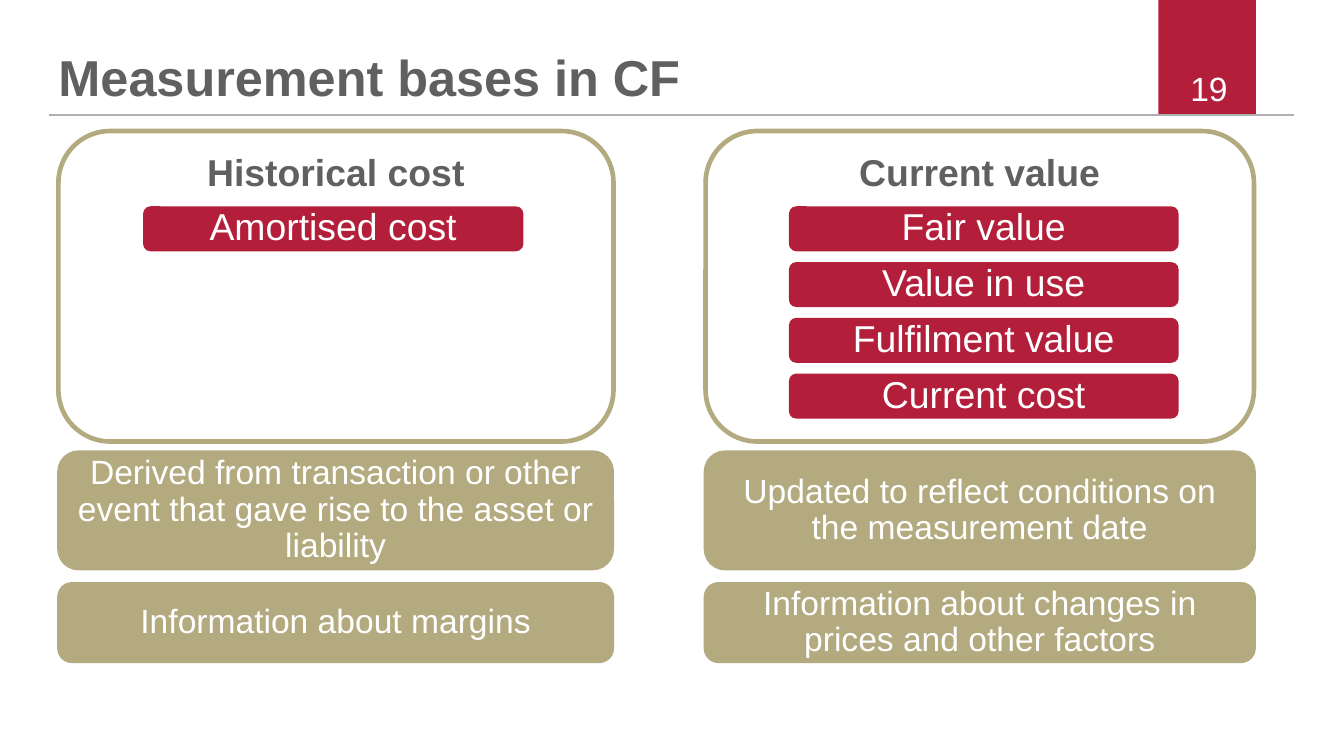
from dataclasses import dataclass
from typing import Optional

from lxml import etree
from pptx import Presentation, util as u
from pptx.dml.color import RGBColor
from pptx.enum import shapes, text
from pptx.oxml import ns

PX = 4572  # EMU per px, 200 px to the inch


@dataclass(frozen=True)
class Theme:
    font: str = "Arial"
    red: str = "B31E3A"
    sand: str = "B3AA7F"
    grey: str = "5F6062"
    rule: str = "AFAFB0"
    white: str = "FFFFFF"
    title_size: int = 27
    label_size: int = 20
    body_size: int = 18


@dataclass(frozen=True)
class Area:
    left: int
    top: int
    width: int
    height: int

    def emu(self) -> list[int]:
        return [n * PX for n in (self.left, self.top, self.width, self.height)]


@dataclass(frozen=True)
class Style:
    size: int
    color: str
    fill: Optional[str] = None
    line: Optional[str] = None
    line_width: float = 0
    bold: bool = False
    anchor: text.MSO_ANCHOR = text.MSO_ANCHOR.MIDDLE


@dataclass(frozen=True)
class Basis:
    left: int
    width: int
    heading: str
    chip_left: int
    chip_width: int
    chips: tuple[str, ...]
    note_left: int
    note_width: int
    source: str
    information: str


THEME = Theme()
FRAME = Style(THEME.label_size, THEME.grey, line=THEME.sand, line_width=2.5,
              bold=True, anchor=text.MSO_ANCHOR.TOP)
CHIP = Style(THEME.label_size, THEME.white, fill=THEME.red)
NOTE = Style(THEME.body_size, THEME.white, fill=THEME.sand,
             line=THEME.sand, line_width=2)
TITLE = Style(THEME.title_size, THEME.grey, bold=True,
              anchor=text.MSO_ANCHOR.BOTTOM)
NUMBER = Style(THEME.body_size, THEME.white)

BASES = (
    Basis(87, 826, "Historical cost", 213, 566, ("Amortised cost",), 88, 823,
          "Derived from transaction or other event that gave rise to the "
          "asset or liability",
          "Information about margins"),
    Basis(1050, 816, "Current value", 1174, 580,
          ("Fair value", "Value in use", "Fulfilment value", "Current cost"),
          1050, 816,
          "Updated to reflect conditions on the measurement date",
          "Information about changes in prices and other factors"),
)
CHIP_TOP, CHIP_PITCH, CHIP_HEIGHT = 307, 83, 67


def write(box, words: str, style: Style, align: text.PP_ALIGN,
          inset_x: int, inset_y: int, spacing: float = 0.9) -> None:
    frame = box.text_frame
    frame.text = words
    frame.word_wrap = True
    frame.auto_size = text.MSO_AUTO_SIZE.NONE
    frame.vertical_anchor = style.anchor
    frame.margin_left = frame.margin_right = inset_x * PX
    frame.margin_top = frame.margin_bottom = inset_y * PX
    para = frame.paragraphs[0]
    para.alignment = align
    para.line_spacing = spacing
    for span in para.runs:
        span.font.name = THEME.font
        span.font.size = u.Pt(style.size)
        span.font.bold = style.bold
        span.font.color.rgb = RGBColor.from_string(style.color)


def add_box(page, area: Area, style: Style, words: str = "",
            kind=shapes.MSO_SHAPE.ROUNDED_RECTANGLE) -> None:
    box = page.shapes.add_shape(kind, *area.emu())
    box.shadow.inherit = False
    if style.fill:
        box.fill.solid()
        box.fill.fore_color.rgb = RGBColor.from_string(style.fill)
    else:
        box.fill.background()
    if style.line:
        box.line.color.rgb = RGBColor.from_string(style.line)
        box.line.width = u.Pt(style.line_width)
    else:
        box.line.fill.background()
    if words:
        write(box, words, style, text.PP_ALIGN.CENTER, 12, 12)


def add_header(page, title: str, number: str) -> None:
    add_box(page, Area(1724, 0, 145, 171), CHIP, kind=shapes.MSO_SHAPE.RECTANGLE)
    rule = page.shapes.add_connector(
        shapes.MSO_CONNECTOR.STRAIGHT, 73 * PX, 171 * PX, 1926 * PX, 171 * PX)
    rule.line.color.rgb = RGBColor.from_string(THEME.rule)
    rule.line.width = u.Pt(1.2)
    etree.SubElement(rule._element.spPr, ns.qn("a:effectLst"))

    number_box = page.shapes.add_textbox(*Area(1379, 101, 466, 60).emu())
    write(number_box, number, NUMBER, text.PP_ALIGN.RIGHT, 18, 8, 1.0)

    heading = page.shapes.title
    heading.left, heading.top, heading.width, heading.height = Area(87, 0, 1548, 160).emu()
    write(heading, title, TITLE, text.PP_ALIGN.LEFT, 0, 0)


def add_basis(page, basis: Basis) -> None:
    add_box(page, Area(basis.left, 195, basis.width, 462), FRAME, basis.heading)
    add_box(page, Area(basis.note_left, 673, basis.note_width, 173), NOTE,
            basis.source)
    add_box(page, Area(basis.note_left, 869, basis.note_width, 115), NOTE,
            basis.information)
    for row, label in enumerate(basis.chips):
        top = CHIP_TOP + row * CHIP_PITCH
        add_box(page, Area(basis.chip_left, top, basis.chip_width, CHIP_HEIGHT),
                CHIP, label)


def main() -> None:
    deck = Presentation()
    deck.slide_width, deck.slide_height = 2000 * PX, 1125 * PX
    page = deck.slides.add_slide(deck.slide_layouts.get_by_name("Title Only"))
    add_header(page, "Measurement bases in CF", "19")
    for basis in BASES:
        add_basis(page, basis)
    deck.save("out.pptx")


if __name__ == "__main__":
    main()
